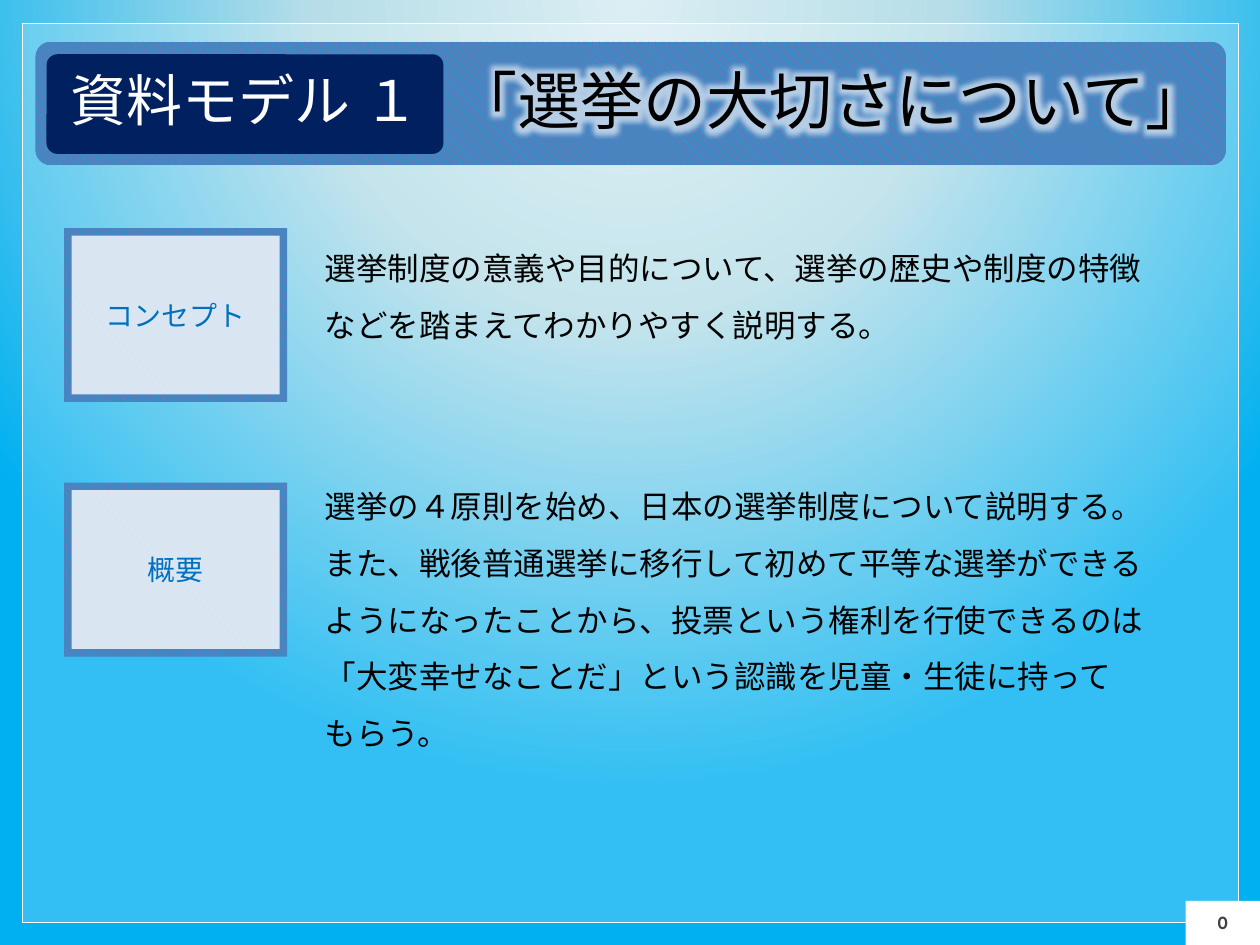
from typing import NamedTuple, Optional

from lxml import etree
from pptx import Presentation
from pptx.dml.color import RGBColor
from pptx.enum.dml import MSO_PATTERN
from pptx.enum.shapes import MSO_SHAPE
from pptx.enum.text import MSO_ANCHOR, MSO_AUTO_SIZE, PP_ALIGN
from pptx.oxml import parse_xml
from pptx.oxml.ns import qn
from pptx.util import Pt

RECTANGLE = MSO_SHAPE.RECTANGLE
ROUNDED = MSO_SHAPE.ROUNDED_RECTANGLE
STRIPES = MSO_PATTERN.WIDE_DOWNWARD_DIAGONAL
CENTER, LEFT = PP_ALIGN.CENTER, PP_ALIGN.LEFT
MIDDLE, TOP = MSO_ANCHOR.MIDDLE, MSO_ANCHOR.TOP
GROW = MSO_AUTO_SIZE.SHAPE_TO_FIT_TEXT

COLORS = {
    "white": "FFFFFF",
    "black": "000000",
    "navy": "002060",
    "sky": "00B0F0",
    "steel": "4F81BD",
    "label": "0070C0",
    "number": "404040",
    "pale": "DBEEF4",
    "aqua": "B7DEE8",
}
JAPANESE = "Noto Sans CJK JP"
DRAWING = 'xmlns:a="http://schemas.openxmlformats.org/drawingml/2006/main"'
BORDER = 4.3


class Area(NamedTuple):
    left: float
    top: float
    width: float
    height: float

    def inset(self, margin: float) -> "Area":
        return Area(self.left + margin, self.top + margin,
                    self.width - 2 * margin, self.height - 2 * margin)


class TextStyle(NamedTuple):
    size: float
    color: str
    name: str = JAPANESE
    bold: bool = False
    align: PP_ALIGN = CENTER
    anchor: MSO_ANCHOR = MIDDLE
    spacing: Optional[float] = None
    insets: tuple = (7.2, 3.6, 7.2, 3.6)
    wrap: bool = True


class Section(NamedTuple):
    label: str
    label_top: float
    body: Area
    lines: tuple


LABEL = TextStyle(16, "label")
BODY = TextStyle(18, "black", align=LEFT, anchor=TOP, spacing=1.5)
BADGE = TextStyle(32, "white", insets=(8.6, 2.9, 8.6, 8.6), wrap=False)
TITLE = TextStyle(36, "black", insets=(0, 2.9, 0, 8.6), wrap=False)
NUMBER = TextStyle(10, "number", "Quicksand", True, insets=(2.9,) * 4, wrap=False)

SECTIONS = (
    Section("コンセプト", 130.3, Area(178.6, 128.2, 521.3, 72.7), (
        "選挙制度の意義や目的について、選挙の歴史や制度の特徴",
        "などを踏まえてわかりやすく説明する。",
    )),
    Section("概要", 275.8, Area(178.6, 264.2, 521.3, 170.6), (
        "選挙の４原則を始め、日本の選挙制度について説明する。",
        "また、戦後普通選挙に移行して初めて平等な選挙ができる",
        "ようになったことから、投票という権利を行使できるのは",
        "「大変幸せなことだ」という認識を児童・生徒に持って",
        "もらう。",
    )),
)


def rgb(color: str) -> RGBColor:
    return RGBColor.from_string(COLORS[color])


def add_box(page, area: Area, color: Optional[str] = None, kind=RECTANGLE,
            corner: Optional[float] = None, opacity: Optional[int] = None):
    """Draw a borderless box; without a color it gets the striped pattern."""
    box = page.shapes.add_shape(kind, *map(Pt, area))
    box.shadow.inherit = False
    box.line.fill.background()
    if corner is not None:
        box.adjustments[0] = corner
    if color is None:
        box.fill.patterned()
        box.fill.pattern = STRIPES
        box.fill.fore_color.rgb = rgb("sky")
        box.fill.back_color.rgb = rgb("steel")
    else:
        box.fill.solid()
        box.fill.fore_color.rgb = rgb(color)
    if opacity is not None:
        tint = box.fill._xPr.find(".//" + qn("a:srgbClr"))
        etree.SubElement(tint, qn("a:alpha"), val=str(opacity * 1000))
    return box


def write(box, lines: tuple, style: TextStyle) -> None:
    frame = box.text_frame
    frame.word_wrap = style.wrap
    frame.vertical_anchor = style.anchor
    for side, inset in zip(("left", "top", "right", "bottom"), style.insets):
        setattr(frame, f"margin_{side}", Pt(inset))
    formats = {"size": Pt(style.size), "name": style.name, "bold": style.bold}
    for index, line in enumerate(lines):
        para = frame.add_paragraph() if index else frame.paragraphs[0]
        para.alignment = style.align
        if style.spacing:
            para.line_spacing = style.spacing
        span = para.add_run()
        span.text = line
        for key, value in formats.items():
            setattr(span.font, key, value)
        span.font.color.rgb = rgb(style.color)
        latin = span.font._element.find(qn("a:latin"))
        latin.addnext(parse_xml(f'<a:ea {DRAWING} typeface="{style.name}"/>'))


def add_text(page, area: Area, lines: tuple, style: TextStyle):
    box = page.shapes.add_textbox(*map(Pt, area))
    write(box, lines, style)
    return box


def add_glow(box) -> None:
    """Give the text of a box a thin white outline and a soft white halo."""
    white = f'<a:srgbClr val="{COLORS["white"]}"'
    properties = box.text_frame.paragraphs[0].runs[0].font._element
    properties.insert(0, parse_xml(
        f'<a:ln {DRAWING} w="{Pt(1)}"><a:solidFill>{white}/></a:solidFill></a:ln>'))
    properties.find(qn("a:solidFill")).addnext(parse_xml(
        f'<a:effectLst {DRAWING}><a:glow rad="{Pt(14)}">{white}>'
        '<a:alpha val="60000"/></a:srgbClr></a:glow></a:effectLst>'))


def add_backdrop(page, area: Area) -> None:
    """Cover the page with a round gradient centred on its top edge."""
    box = add_box(page, area, "sky")
    stops = "".join(
        f'<a:gs pos="{place * 1000}"><a:srgbClr val="{COLORS[color]}"/></a:gs>'
        for place, color in ((0, "pale"), (40, "aqua"), (100, "sky")))
    gradient = parse_xml(
        f'<a:gradFill {DRAWING} rotWithShape="1"><a:gsLst>{stops}</a:gsLst>'
        '<a:path path="circle"><a:fillToRect l="50000" t="0" r="50000" b="100000"/>'
        '</a:path></a:gradFill>')
    solid = box._element.spPr.find(qn("a:solidFill"))
    solid.getparent().replace(solid, gradient)


def add_section(page, section: Section) -> None:
    frame = Area(36.7, section.label_top, 127.4, 99.4)
    add_box(page, frame)
    panel = add_box(page, frame.inset(BORDER), "white", opacity=80)
    write(panel, (section.label,), LABEL)
    body = add_text(page, section.body, section.lines, BODY)
    body.text_frame.auto_size = GROW


def main() -> None:
    deck = Presentation()
    deck.slide_width, deck.slide_height = Pt(720), Pt(540)
    page = deck.slides.add_slide(deck.slide_layouts[6])

    add_backdrop(page, Area(0, 0, 720, 540))
    veil = add_box(page, Area(13, 13.7, 694.8, 513.4), "white", opacity=20)
    veil.line.color.rgb = rgb("white")
    veil.line.width = Pt(0.5)

    add_box(page, Area(20.2, 23.8, 680.4, 70.6), kind=ROUNDED, corner=0.124)
    badge = add_box(page, Area(26.6, 31, 226.8, 56.9), "navy", ROUNDED, 0.109)
    write(badge, ("資料モデル １",), BADGE)
    title = add_text(page, Area(254.9, 29.5, 440.6, 59.8),
                     ("「選挙の大切さについて」",), TITLE)
    add_glow(title)

    number = add_box(page, Area(677.5, 514.8, 42.5, 25.2), "white")
    write(number, ("0",), NUMBER)
    for section in SECTIONS:
        add_section(page, section)

    deck.save("out.pptx")


if __name__ == "__main__":
    main()
